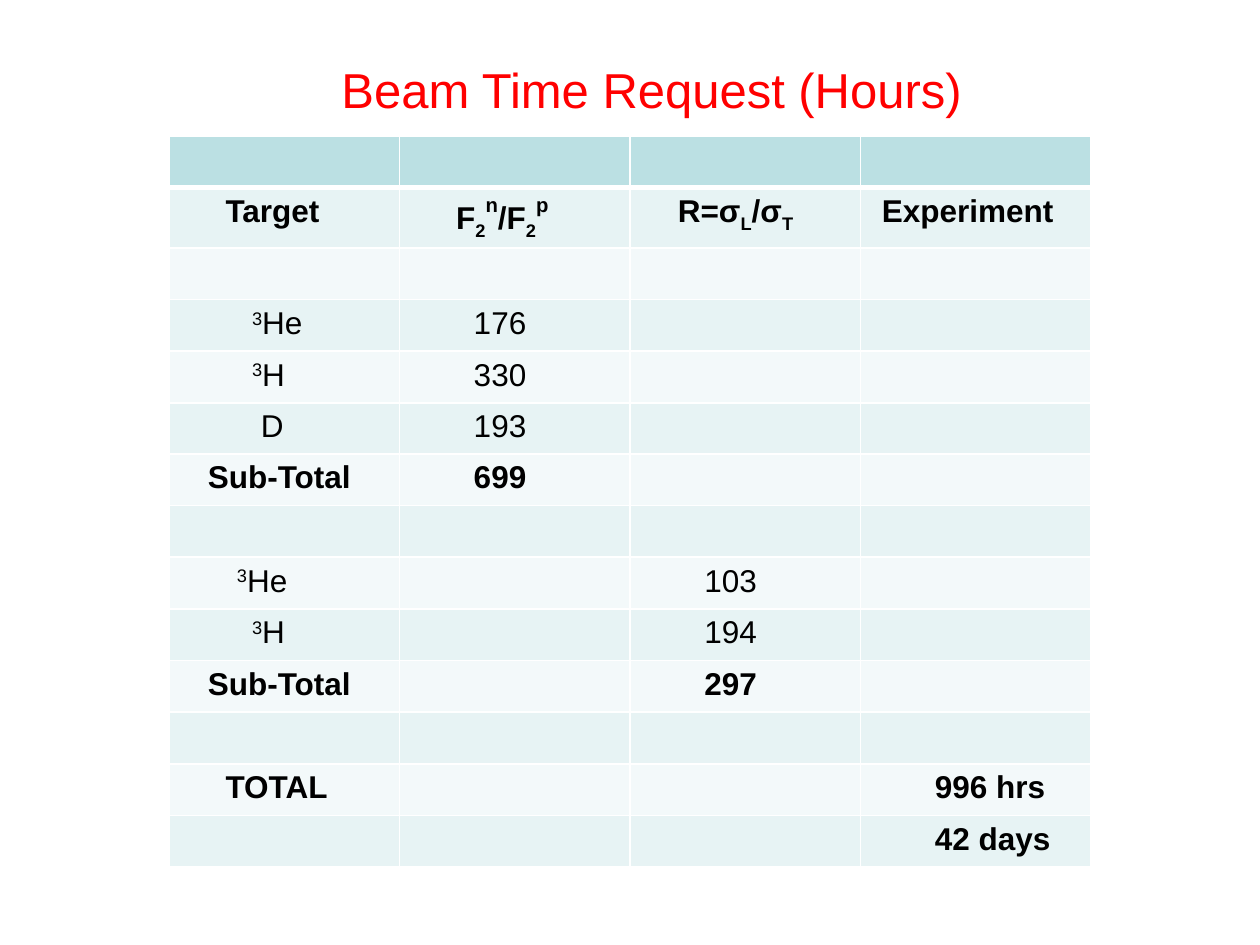
from lxml.etree import SubElement
from pptx import Presentation
from pptx.dml.color import RGBColor
from pptx.enum.text import MSO_ANCHOR, PP_ALIGN
from pptx.oxml.ns import qn
from pptx.util import Inches, Pt

COLORS = {
    "title": "FF0000",
    "text": "000000",
    "header": "BBE0E3",
    "band_dark": "E7F3F4",
    "band_light": "F3F9FA",
    "border": "FFFFFF",
}
FONT = "Arial"
ROW_COUNT, COLUMN_COUNT = 14, 4
ROW_HEIGHT, DEUTERIUM_ROW_HEIGHT = 0.41, 0.39
DEUTERIUM_ROW = 5
BOLD_ROWS = {1, 6, 10, 12, 13}
VALUE_INDENT = 0.59

# Each run is (text, baseline in percent, size in points)
NORMAL, SUBSCRIPT, SUPERSCRIPT, HIGH = (0, 18), (-25, 18), (30, 18), (50, 20)


def plain(text):
    return [(text, *NORMAL)]


def isotope(mass, symbol):
    return [(mass, *SUPERSCRIPT), (symbol, *NORMAL)]


STRUCTURE_RATIO = [
    ("F", *NORMAL), ("2", *SUBSCRIPT), ("n", *HIGH),
    ("/F", *NORMAL), ("2", *SUBSCRIPT), ("p", *HIGH),
]
CROSS_SECTION_RATIO = [
    ("R=σ", *NORMAL), ("L", *SUBSCRIPT), ("/σ", *NORMAL), ("T", *SUBSCRIPT),
]

# (row, column): (left indent in inches, runs)
CONTENT = {
    (1, 0): (0.45, plain("Target")),
    (1, 1): (0.45, STRUCTURE_RATIO),
    (1, 2): (0.38, CROSS_SECTION_RATIO),
    (1, 3): (0.17, plain("Experiment")),
    (3, 0): (0.66, isotope("3", "He")),
    (4, 0): (0.66, isotope("3", "H")),
    (5, 0): (0.73, plain("D")),
    (6, 0): (0.31, plain("Sub-Total")),
    (8, 0): (0.54, isotope("3", "He")),
    (9, 0): (0.66, isotope("3", "H")),
    (10, 0): (0.31, plain("Sub-Total")),
    (12, 0): (0.45, plain("TOTAL")),
}
VALUES = {
    (3, 1): "176", (4, 1): "330", (5, 1): "193", (6, 1): "699",
    (8, 2): "103", (9, 2): "194", (10, 2): "297",
    (12, 3): "996 hrs", (13, 3): "42 days",
}


def style_font(font, size, color, bold=False):
    font.name = FONT
    font.size = Pt(size)
    font.bold = bold
    font.color.rgb = RGBColor.from_string(COLORS[color])


def add_title(slide, text):
    title = slide.shapes.title
    title.left, title.top = Inches(2.61), Inches(0.42)
    title.width, title.height = Inches(5.39), Inches(0.57)
    text_frame = title.text_frame
    text_frame.text = text
    text_frame.vertical_anchor = MSO_ANCHOR.TOP
    paragraph = text_frame.paragraphs[0]
    paragraph.alignment = PP_ALIGN.LEFT
    style_font(paragraph.runs[0].font, 28, "title")


def set_borders(cell, top, bottom):
    properties = cell._tc.get_or_add_tcPr()
    for side, width in (("L", 1), ("R", 1), ("T", top), ("B", bottom)):
        line = SubElement(properties, qn(f"a:ln{side}"), w=str(Pt(width)))
        fill = SubElement(line, qn("a:solidFill"))
        SubElement(fill, qn("a:srgbClr"), val=COLORS["border"])


def fill_cell(cell, color):
    cell.fill.solid()
    cell.fill.fore_color.rgb = RGBColor.from_string(COLORS[color])


def write_cell(cell, indent, runs, bold):
    cell.margin_left = Inches(indent)
    paragraph = cell.text_frame.paragraphs[0]
    for text, baseline, size in runs:
        run = paragraph.add_run()
        run.text = text
        style_font(run.font, size, "text", bold)
        if baseline:
            run._r.get_or_add_rPr().set("baseline", str(baseline * 1000))


def band_color(row):
    if row == 0:
        return "header"
    return "band_dark" if row % 2 else "band_light"


def add_hours_table(slide):
    frame = slide.shapes.add_table(
        ROW_COUNT, COLUMN_COUNT,
        Inches(1.34), Inches(1.08), Inches(7.32), Inches(5.72))
    table = frame.table
    for column in table.columns:
        column.width = Inches(1.83)
    for row in table.rows:
        row.height = Inches(ROW_HEIGHT)
    table.rows[DEUTERIUM_ROW].height = Inches(DEUTERIUM_ROW_HEIGHT)

    # Borders and banding, with a thick rule below the header
    for row in range(ROW_COUNT):
        for column in range(COLUMN_COUNT):
            cell = table.cell(row, column)
            set_borders(cell, 3 if row == 1 else 1, 3 if row == 0 else 1)
            fill_cell(cell, band_color(row))

    # Labels and hours
    values = {place: (VALUE_INDENT, plain(text)) for place, text in VALUES.items()}
    for (row, column), (indent, runs) in (CONTENT | values).items():
        write_cell(table.cell(row, column), indent, runs, row in BOLD_ROWS)


def main():
    presentation = Presentation()
    presentation.slide_width = Inches(10)
    presentation.slide_height = Inches(7.5)
    slide = presentation.slides.add_slide(presentation.slide_layouts[5])
    add_hours_table(slide)
    add_title(slide, "Beam Time Request (Hours)")
    presentation.save("out.pptx")


if __name__ == "__main__":
    main()
